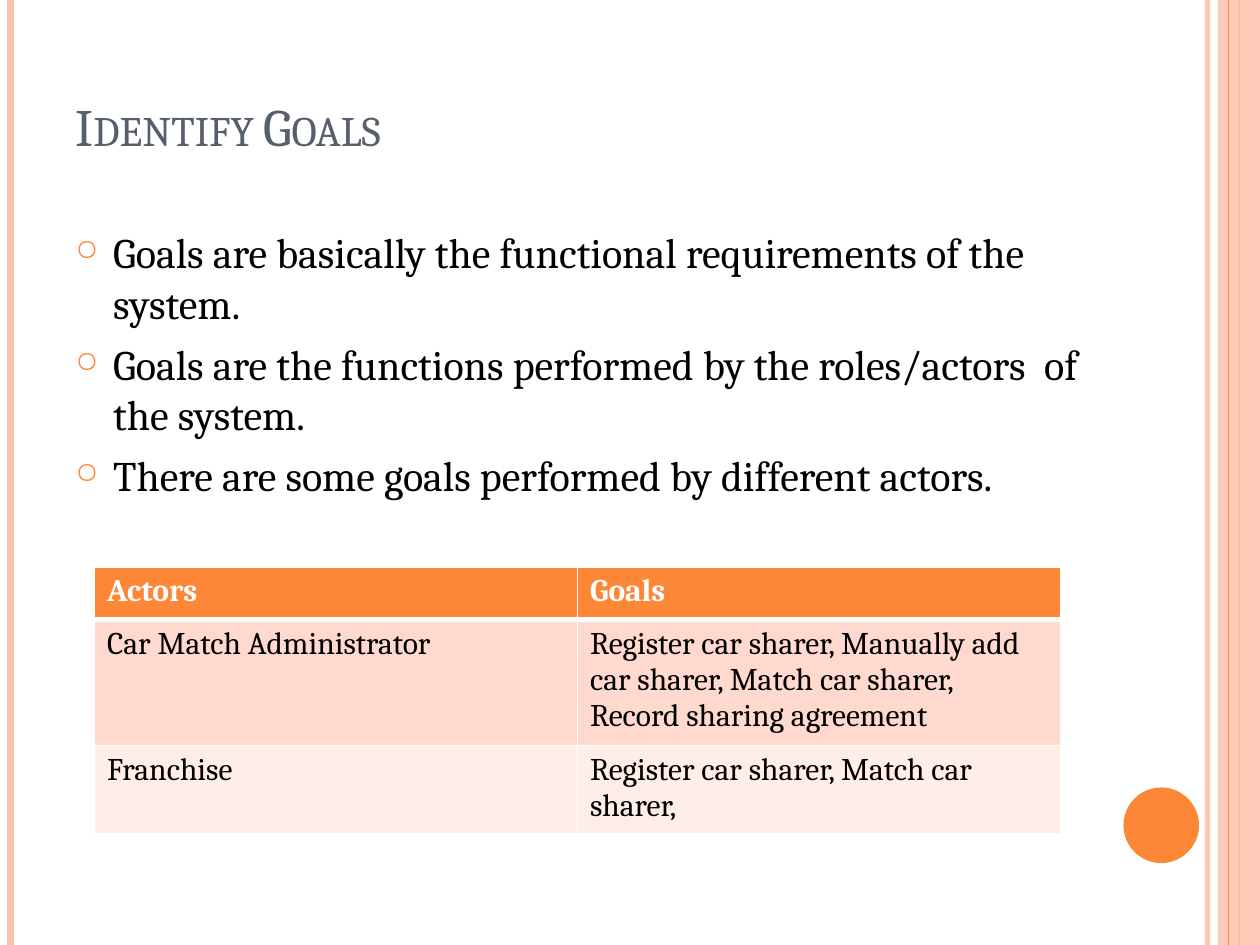
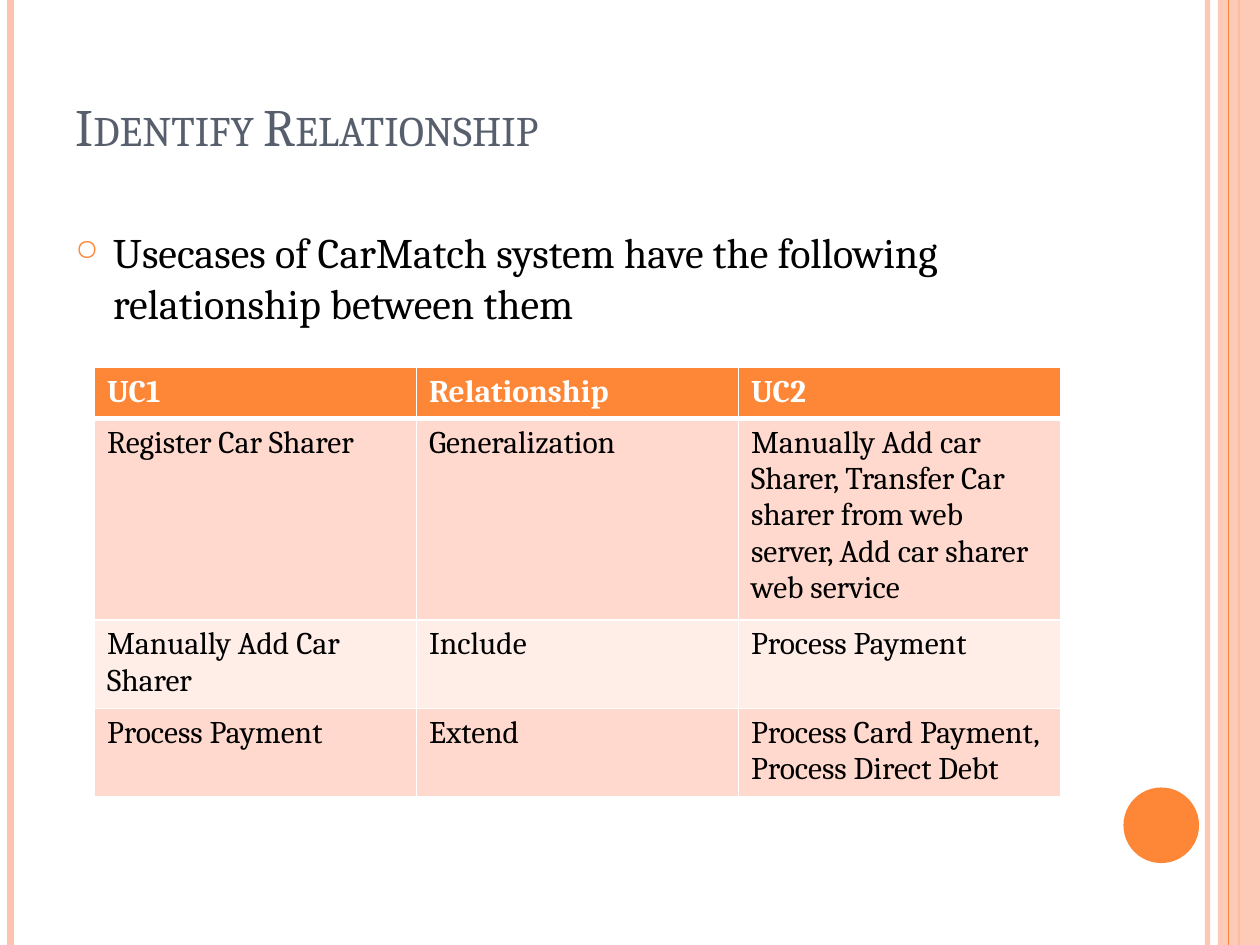
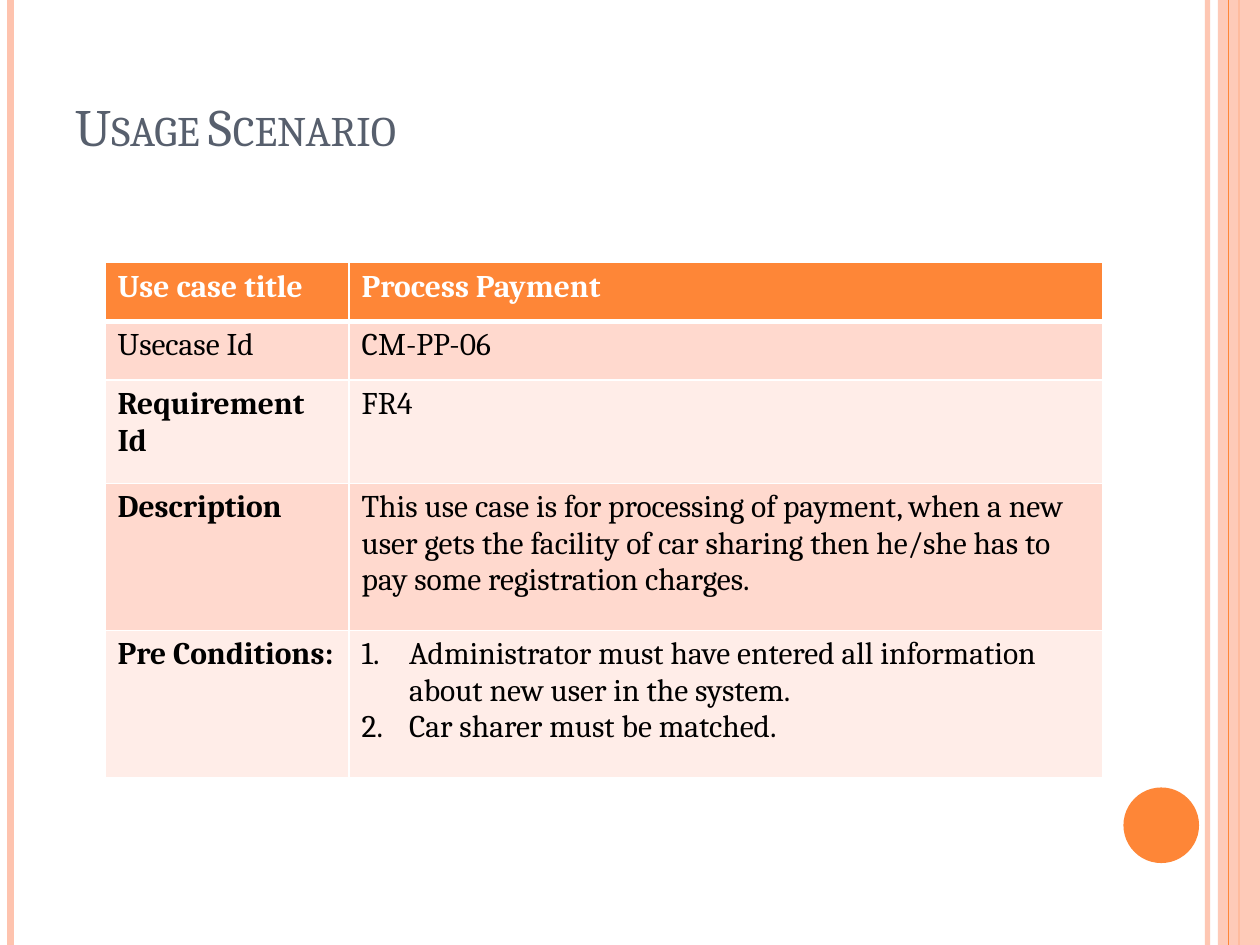
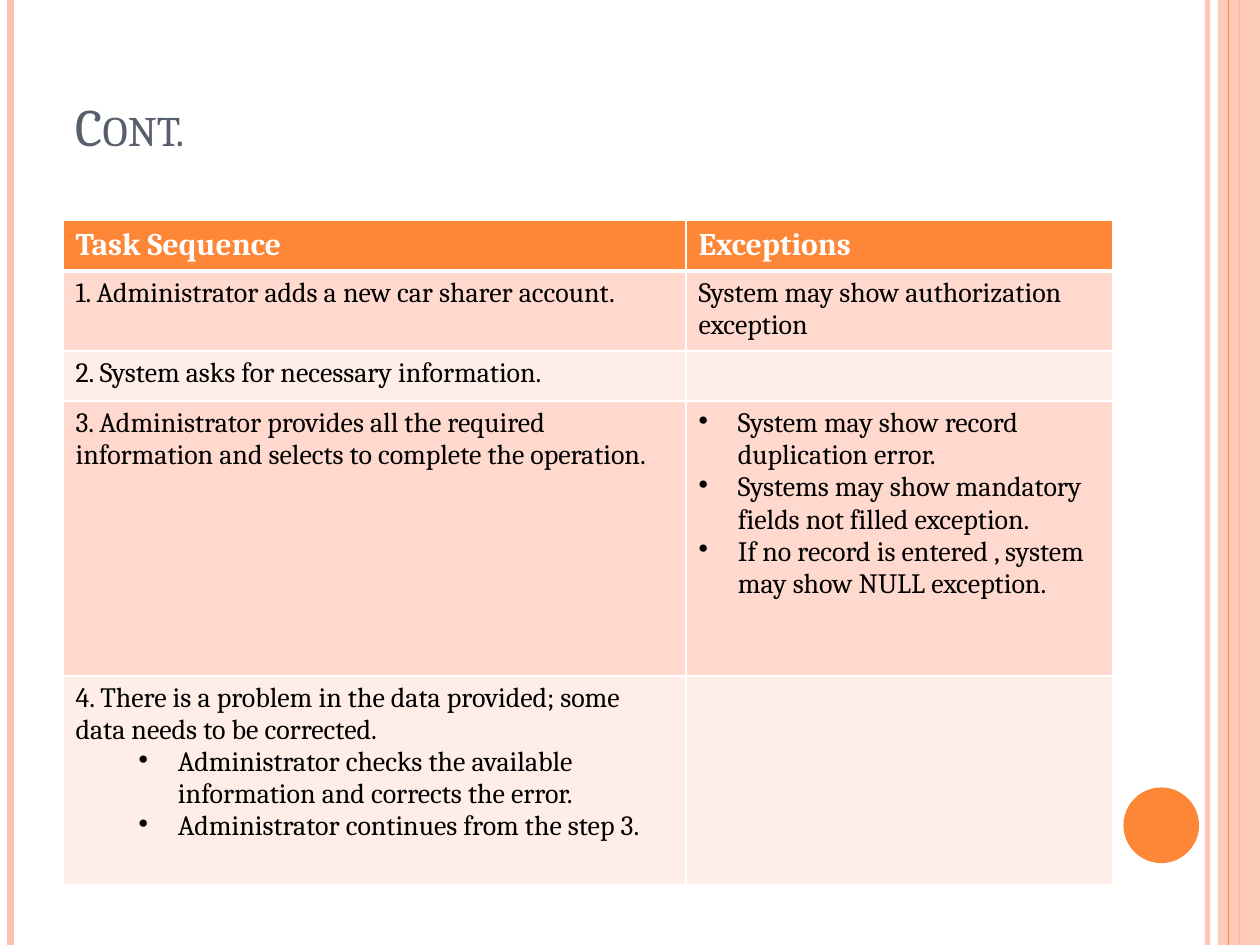
from lxml.etree import SubElement
from pptx import Presentation
from pptx.dml.color import RGBColor
from pptx.enum.shapes import MSO_CONNECTOR, MSO_SHAPE
from pptx.enum.text import MSO_ANCHOR
from pptx.oxml.ns import qn
from pptx.util import Pt

WIDTH, HEIGHT = 720, 540
FONT = "Cambria"
ORANGE, PEACH, SLATE = "FE8637", "FEC3AE", "575F6D"
WHITE, BLACK = "FFFFFF", "000000"
BANDS = ["FFD9CE", "FFEDE8"]

TITLE = (36, 3, 588, 90)
BODY = (36, 126, 588, 384)
BALL = (642, 450, 43.2, 43.2)
STRIP = (696, 0, 24, HEIGHT)
UNDER = [(690, PEACH, 3, 93), (6, PEACH, 4.5, 100), (708, ORANGE, 1.5, 100)]
OVER = [(702, ORANGE, 0.75, 100)]

LISTS = {
    "ring": (21.6, 21.6, [("buClr", ORANGE), ("buSzPct", "70000"), ("buChar", "○")]),
    "number": (27, 27, [("buAutoNum", "arabicPeriod")]),
    "dot": (22.5, 22.5, [("buChar", "•")]),
    "inner": (58.5, 22.5, [("buChar", "•")]),
}

SLIDES = [
    {
        "title": "Identify Goals",
        "body": [
            "Goals are basically the functional requirements of the system.",
            "Goals are the functions performed by the roles/actors  of the system.",
            "There are some goals performed by different actors.",
        ],
        "table": {
            "place": (54, 324, 174),
            "cols": [276, 276],
            "rows": [30, 30, 30],
            "cells": [
                ["Actors", "Goals"],
                ["Car Match Administrator",
                 "Register car sharer, Manually add car sharer, Match car sharer, "
                 "Record sharing agreement"],
                ["Franchise", "Register car sharer, Match car sharer,"],
            ],
        },
    },
    {
        "title": "Identify Relationship",
        "body": ["Usecases of CarMatch system have the following relationship between them"],
        "table": {
            "place": (54, 210, 267),
            "cols": [184, 184, 184],
            "rows": [29.2, 29.2, 29.2, 29.2],
            "cells": [
                ["UC1", "Relationship", "UC2"],
                ["Register Car Sharer", "Generalization",
                 "Manually Add car Sharer, Transfer Car sharer from web server, "
                 "Add car sharer web service"],
                ["Manually Add Car Sharer", "Include", "Process Payment"],
                ["Process Payment", "Extend", "Process Card Payment, Process Direct Debt"],
            ],
        },
    },
    {
        "title": "Usage Scenario",
        "table": {
            "place": (60, 150, 294.5),
            "cols": [139.5, 430.5],
            "rows": [33.6, 33.6, 59, 84, 84],
            "strong": [2, 3, 4],
            "cells": [
                ["Use case title", "Process Payment"],
                ["Usecase Id", "CM-PP-06"],
                ["Requirement Id", "FR4"],
                ["Description",
                 "This use case is for processing of payment, when a new user gets the "
                 "facility of car sharing then he/she has to pay some registration charges."],
                ["Pre Conditions:", [
                    ("Administrator must have entered all information about new user "
                     "in the system.", "number"),
                    ("Car sharer must be matched.", "number"),
                ]],
            ],
        },
    },
    {
        "title": "Cont.",
        "table": {
            "place": (36, 126, 386),
            "cols": [356, 244],
            "rows": [28.8, 44.6, 28.8, 157, 119.5],
            "size": 16,
            "cells": [
                ["Task Sequence", "Exceptions"],
                ["1. Administrator adds a new car sharer account.",
                 "System may show authorization exception"],
                ["2. System asks for necessary information.", ""],
                ["3. Administrator provides all the required information and selects "
                 "to complete the operation.", [
                     ("System may show record duplication error.", "dot"),
                     ("Systems may show mandatory fields not filled exception.", "dot"),
                     ("If no record is entered , system may show NULL exception.", "dot"),
                 ]],
                [[
                    ("4. There is a problem in the data provided; some data needs to be "
                     "corrected.", None),
                    ("Administrator checks the available information and corrects the "
                     "error.", "inner"),
                    ("Administrator continues from the step 3.", "inner"),
                ], ""],
            ],
        },
    },
]


def paint(fill, color, alpha=100):
    fill.solid()
    fill.fore_color.rgb = RGBColor.from_string(color)
    return alpha


def fade(shape, alpha):
    if alpha < 100:
        tone = next(shape._element.spPr.iter(qn("a:srgbClr")))
        SubElement(tone, qn("a:alpha"), val=str(alpha * 1000))


def mark(para, kind):
    left, hang, parts = LISTS[kind]
    props = para._p.get_or_add_pPr()
    props.set("marL", str(Pt(left)))
    props.set("indent", str(-Pt(hang)))
    for tag, value in parts:
        node = SubElement(props, qn("a:" + tag))
        if tag == "buClr":
            SubElement(node, qn("a:srgbClr"), val=value)
        else:
            key = {"buChar": "char", "buAutoNum": "type"}.get(tag, "val")
            node.set(key, value)


def write(frame, text, size=18, color=BLACK, bold=False, small=False, before=0):
    items = [(text, None)] if isinstance(text, str) else text
    for n, (words, kind) in enumerate(items):
        para = frame.add_paragraph() if n else frame.paragraphs[0]
        para.font.size = Pt(size)
        if before:
            para.space_before = Pt(before)
        if kind:
            mark(para, kind)
        if not words:
            continue
        run = para.add_run()
        run.text = words
        font = run.font
        font.name, font.size, font.bold = FONT, Pt(size), bold
        font.color.rgb = RGBColor.from_string(color)
        if small:
            run._r.get_or_add_rPr().set("cap", "small")


def box(slide, place, text, anchor=MSO_ANCHOR.TOP, **look):
    frame = slide.shapes.add_textbox(*map(Pt, place)).text_frame
    frame.word_wrap = True
    frame.vertical_anchor = anchor
    write(frame, text, **look)


def rule(slide, x, color, width, alpha):
    line = slide.shapes.add_connector(MSO_CONNECTOR.STRAIGHT, Pt(x), 0, Pt(x), Pt(HEIGHT))
    line.line.width = Pt(width)
    paint(line.line.fill, color)
    fade(line, alpha)
    SubElement(line._element.spPr, qn("a:effectLst"))


def block(slide, kind, place, color, alpha=100):
    shape = slide.shapes.add_shape(kind, *map(Pt, place))
    shape.shadow.inherit = False
    shape.line.fill.background()
    paint(shape.fill, color)
    fade(shape, alpha)


def frame_up(slide):
    for spec in UNDER:
        rule(slide, *spec)
    block(slide, MSO_SHAPE.RECTANGLE, STRIP, PEACH, 87)
    for spec in OVER:
        rule(slide, *spec)
    block(slide, MSO_SHAPE.OVAL, BALL, ORANGE)


def edge(cell, row):
    props = cell._tc.get_or_add_tcPr()
    widths = {"L": 1, "R": 1, "T": 3 if row == 1 else 1, "B": 1 if row else 3}
    for side, width in widths.items():
        line = SubElement(props, qn("a:ln" + side), w=str(Pt(width)))
        SubElement(SubElement(line, qn("a:solidFill")), qn("a:srgbClr"), val=WHITE)


def grid(slide, place, cols, rows, cells, size=18, strong=()):
    left, top, height = place
    shape = slide.shapes.add_table(
        len(rows), len(cols), Pt(left), Pt(top), Pt(sum(cols)), Pt(height))
    table = shape.table
    for col, width in zip(table.columns, cols):
        col.width = Pt(width)
    for row, tall in zip(table.rows, rows):
        row.height = Pt(tall)
    shape.height = Pt(height)
    for r, line in enumerate(cells):
        for c, text in enumerate(line):
            cell = table.cell(r, c)
            edge(cell, r)
            paint(cell.fill, BANDS[(r - 1) % 2] if r else ORANGE)
            write(cell.text_frame, text, size=size if r else 18,
                  color=BLACK if r else WHITE, bold=r == 0 or (c == 0 and r in strong))


def main():
    deck = Presentation()
    deck.slide_width, deck.slide_height = Pt(WIDTH), Pt(HEIGHT)
    for page in SLIDES:
        slide = deck.slides.add_slide(deck.slide_layouts[6])
        paint(slide.background.fill, WHITE)
        frame_up(slide)
        box(slide, TITLE, page["title"], MSO_ANCHOR.BOTTOM, size=30, color=SLATE, small=True)
        if "body" in page:
            box(slide, BODY, [(text, "ring") for text in page["body"]], size=24, before=6)
        grid(slide, **page["table"])
    deck.save("out.pptx")


if __name__ == "__main__":
    main()
